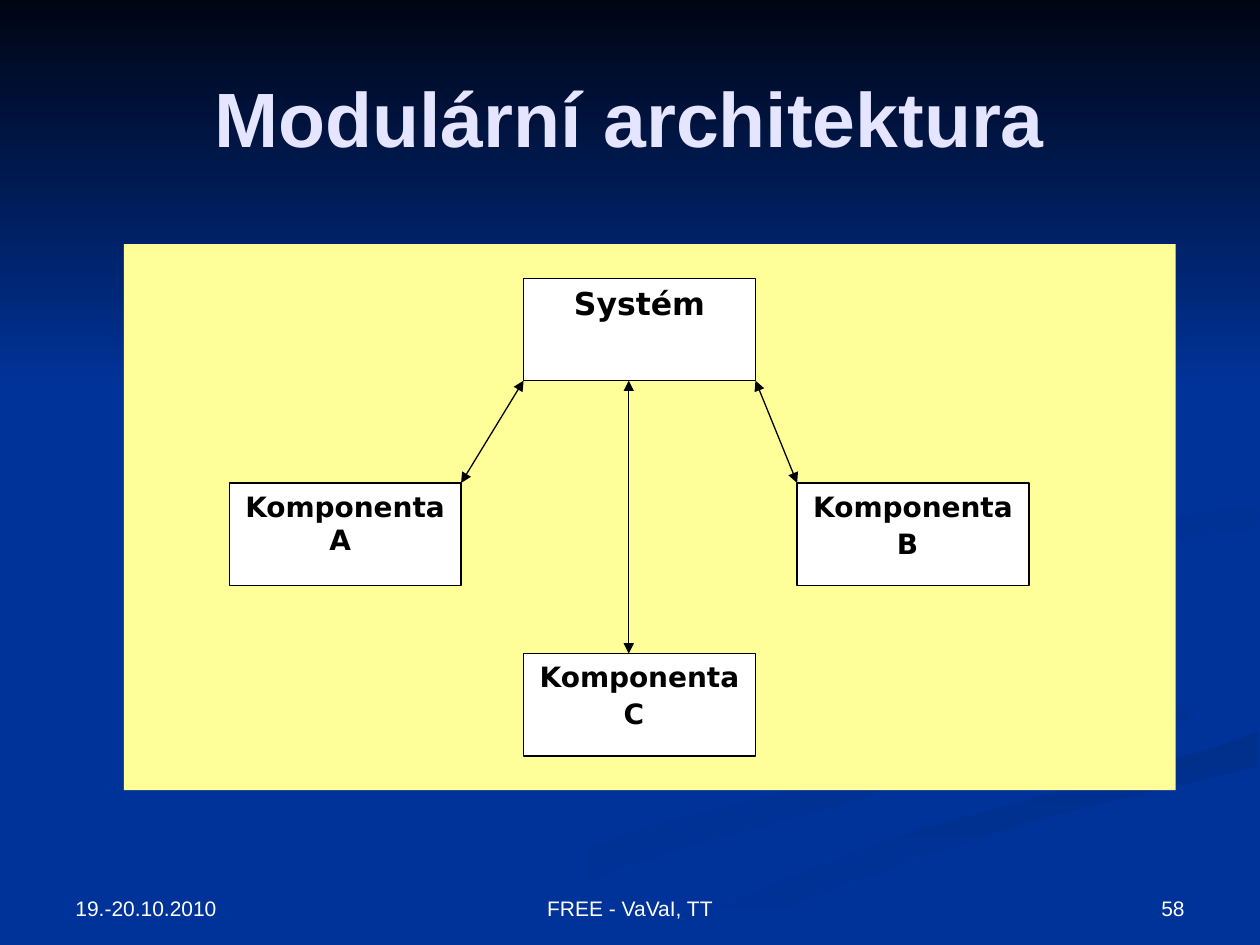
from pptx import Presentation
from pptx import util as u
from pptx.dml.color import RGBColor
from pptx.enum import shapes, text
from pptx.oxml.ns import qn
from lxml import etree

PAGE_WIDTH, PAGE_HEIGHT = 720, 540
MARGIN = 36
BLUE, BLACK, WHITE = "003399", "000000", "FFFFFF"
TITLE_COLOR, PANEL_COLOR = "E5E5FF", "FFFF99"
SKY_COLORS = ("000514", BLUE)
SKY_HEIGHT = 222
CURVE_STEPS = 6

BOX_WIDTH = 132.5
ROW = 19.5
BOX_HEIGHT = 3 * ROW
TOP = 159
MIDDLE = TOP + 2 * BOX_HEIGHT
BOTTOM = MIDDLE + BOX_HEIGHT + 2 * ROW
LEFT, CENTER, RIGHT = 131, 299.2, 455.5
STEM = 359.3

RIBBONS = {
    "left": dict(
        upper=[(414, 330), (428, 354), (502, 378), (566, 407), (514, 436),
               (359, 476), (216, 539)],
        lower=[(414, 330), (442, 357), (515, 380), (576, 418), (503, 452),
               (359, 495), (260, 539)],
        colors=(BLUE, "003193"), angle=0),
    "middle": dict(
        upper=[(521, 334), (557, 362), (639, 385), (679, 410), (644, 436)],
        lower=[(521, 334), (552, 369), (625, 392), (661, 418), (644, 436)],
        colors=(BLUE, "003193"), angle=45),
    "bottom": dict(
        upper=[(719, 418), (624, 446), (501, 482), (362, 539)],
        lower=[(719, 438), (591, 469), (467, 511), (411, 539)],
        colors=("002F8C", BLUE), angle=90),
    "wide": dict(
        upper=[(719, 279), (613, 296), (522, 334), (584, 371), (679, 410),
               (562, 456), (343, 539)],
        lower=[(719, 289), (623, 305), (562, 333), (624, 366), (719, 387),
               (719, 418), (501, 482), (362, 539)],
        colors=(BLUE, BLUE), angle=0),
    "right": dict(
        upper=[(719, 289), (647, 301), (562, 331), (595, 357)],
        lower=[(719, 302), (645, 313), (580, 340), (595, 357)],
        colors=("003091", BLUE), angle=45),
}


def color(value):
    return RGBColor.from_string(value)


def paint(fill, value):
    fill.solid()
    fill.fore_color.rgb = color(value)


def paint_gradient(fill, colors, angle):
    fill.gradient()
    fill.gradient_angle = (360 - angle) % 360
    for stop, value in zip(fill.gradient_stops, colors):
        stop.color.rgb = color(value)


def set_font(font, name, size, value, bold=False):
    font.name = name
    font.size = u.Pt(size)
    font.bold = bold
    font.color.rgb = color(value)


def blend(before, start, end, after, t):
    return (2 * start + (end - before) * t
            + (2 * before - 5 * start + 4 * end - after) * t ** 2
            + (3 * start - before - 3 * end + after) * t ** 3) / 2


def smooth_curve(knots):
    padded = [knots[0], *knots, knots[-1]]
    points = []
    for window in zip(padded, padded[1:], padded[2:], padded[3:]):
        across, down = zip(*window)
        for step in range(CURVE_STEPS):
            t = step / CURVE_STEPS
            points.append((min(blend(*across, t), PAGE_WIDTH),
                           min(blend(*down, t), PAGE_HEIGHT)))
    return points + [knots[-1]]


def add_ribbon(page, upper, lower, colors, angle):
    edge = smooth_curve(upper) + smooth_curve(lower)[::-1]
    builder = page.shapes.build_freeform(*edge[0], scale=u.Pt(1))
    builder.add_line_segments(edge[1:], close=True)
    ribbon = builder.convert_to_shape()
    ribbon.shadow.inherit = False
    ribbon.line.fill.background()
    paint_gradient(ribbon.fill, colors, angle)


def add_rectangle(page, left, top, width, height, fill):
    box = page.shapes.add_shape(
        shapes.MSO_SHAPE.RECTANGLE, *map(u.Pt, (left, top, width, height)))
    box.shadow.inherit = False
    box.line.fill.background()
    paint(box.fill, fill)
    return box


def add_module(page, label, left, top, size, gap_size):
    box = add_rectangle(page, left, top, BOX_WIDTH, BOX_HEIGHT, WHITE)
    box.line.color.rgb = color(BLACK)
    box.line.width = u.Pt(0.75)
    frame = box.text_frame
    frame.word_wrap = True
    frame.vertical_anchor = text.MSO_ANCHOR.TOP
    para = frame.paragraphs[0]
    para.alignment = text.PP_ALIGN.CENTER
    set_font(para.font, "DejaVu Sans", size, BLACK, True)
    para.add_run().text = label
    if gap_size:
        span = para.add_run()
        span.text = " "
        span.font.size = u.Pt(gap_size)


def add_arrow(page, start, end):
    arrow = page.shapes.add_connector(
        shapes.MSO_CONNECTOR.STRAIGHT, *map(u.Pt, start + end))
    arrow.line.width = u.Pt(0.75)
    arrow.line.color.rgb = color(BLACK)
    outline = arrow._element.spPr.find(qn("a:ln"))
    for tag in ("a:headEnd", "a:tailEnd"):
        etree.SubElement(outline, qn(tag), type="triangle")
    etree.SubElement(arrow._element.spPr, qn("a:effectLst"))


def add_footer(page, label, left, width, alignment):
    box = page.shapes.add_textbox(*map(u.Pt, (left, 492, width, 37.5)))
    frame = box.text_frame
    frame.word_wrap = True
    frame.vertical_anchor = text.MSO_ANCHOR.BOTTOM
    para = frame.paragraphs[0]
    para.text = label
    para.alignment = alignment
    set_font(para.font, "Arial", 12, WHITE)


def add_title(page, label):
    title = page.shapes.title
    title.left, title.top = u.Pt(MARGIN), u.Pt(21.6)
    title.width, title.height = u.Pt(PAGE_WIDTH - 2 * MARGIN), u.Pt(90)
    frame = title.text_frame
    frame.text = label
    frame.vertical_anchor = text.MSO_ANCHOR.MIDDLE
    para = frame.paragraphs[0]
    para.alignment = text.PP_ALIGN.CENTER
    set_font(para.font, "Arial", 44, TITLE_COLOR, True)
    page.shapes._spTree.append(title._element)


def add_backdrop(page):
    paint(page.background.fill, BLUE)
    for ribbon in RIBBONS.values():
        add_ribbon(page, **ribbon)
    sky = add_rectangle(page, 0, 0, PAGE_WIDTH, SKY_HEIGHT, BLUE)
    paint_gradient(sky.fill, SKY_COLORS, 90)


def add_diagram(page):
    add_rectangle(page, 70.8, TOP - ROW, 601, 16 * ROW, PANEL_COLOR)
    for module in (("Systém", CENTER, TOP, 18, None),
                   ("Komponenta A ", LEFT, MIDDLE, 16, None),
                   ("Komponenta B", RIGHT, MIDDLE, 16, 18),
                   ("Komponenta C", CENTER, BOTTOM, 16, 18)):
        add_module(page, *module)
    system_base = TOP + BOX_HEIGHT
    for component, system in (
            ((LEFT + BOX_WIDTH, MIDDLE), (CENTER, system_base)),
            ((RIGHT, MIDDLE), (CENTER + BOX_WIDTH, system_base)),
            ((STEM, BOTTOM), (STEM, system_base))):
        add_arrow(page, component, system)


def main():
    deck = Presentation()
    deck.slide_width, deck.slide_height = u.Pt(PAGE_WIDTH), u.Pt(PAGE_HEIGHT)
    page = deck.slides.add_slide(deck.slide_layouts[5])
    add_backdrop(page)
    add_title(page, "Modulární architektura")
    add_diagram(page)
    for footer in (("19.-20.10.2010", MARGIN, 168, text.PP_ALIGN.LEFT),
                   ("FREE - VaVaI, TT", 246, 228, text.PP_ALIGN.CENTER),
                   ("58", 516, 168, text.PP_ALIGN.RIGHT)):
        add_footer(page, *footer)
    deck.save("out.pptx")


if __name__ == "__main__":
    main()
